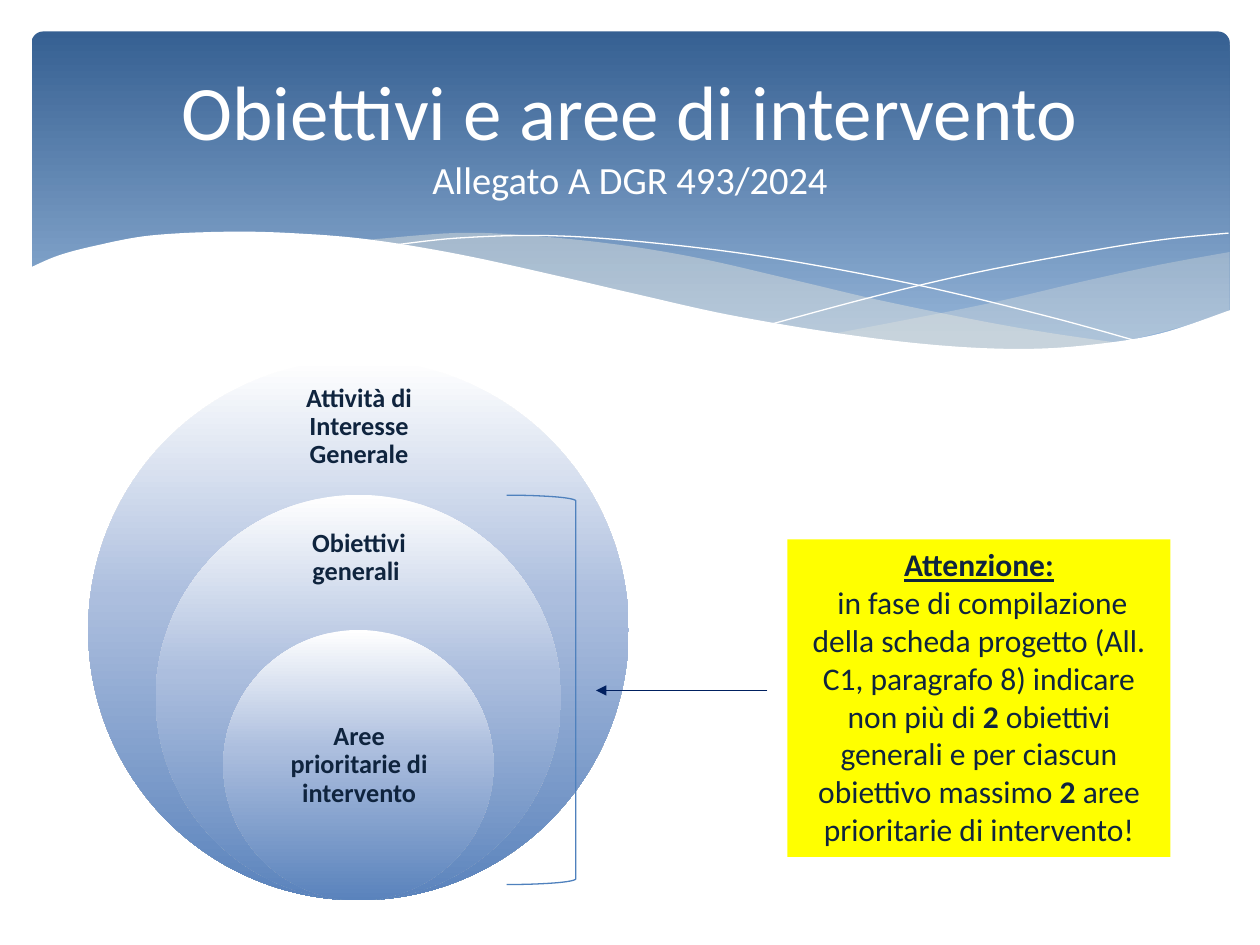
from copy import deepcopy

from lxml import etree
from pptx import Presentation
from pptx import util as u
from pptx.dml.color import RGBColor
from pptx.enum import shapes, text
from pptx.oxml.ns import qn


def rgb(value):
    return RGBColor.from_string(value)


def smooth(*knots):
    """Return EMU points along a Catmull-Rom curve through knots given in grid cells."""
    padded = (knots[0], *knots, knots[-1])
    points = []
    for a, b, c, d in zip(padded, padded[1:], padded[2:], padded[3:]):
        for step in range(8):
            t = step / 8
            x, y = (
                b[i] + t * (c[i] - a[i]) / 2
                + t**2 * (2 * a[i] - 5 * b[i] + 4 * c[i] - d[i]) / 2
                + t**3 * (3 * b[i] - a[i] - 3 * c[i] + d[i]) / 2
                for i in (0, 1)
            )
            points.append((x * column, y * row))
    return points + [(knots[-1][0] * column, knots[-1][1] * row)]


presentation = Presentation()
presentation.slide_width, presentation.slide_height = u.Inches(10), u.Inches(7.5)
slide = presentation.slides.add_slide(presentation.slide_layouts[6])
column = presentation.slide_width / 100
row = presentation.slide_height / 75

KIND = shapes.MSO_SHAPE
NAVY = "0F243E"
painted = []  # shape, gradient stops, line colour, alpha

# Header band and its waves
band = slide.shapes.add_shape(
    KIND.ROUNDED_RECTANGLE, *(round(n * column) for n in (2.5, 2.5, 95.1, 27)))
band.adjustments[0] = 0.034
painted.append((band, [(0, "366092"), (0.9, "93B3D7")], None, None))

right_wave = (
    smooth((97.6, 20), (92.1, 21), (86.1, 22.3), (77.9, 24.2), (66.1, 26.5))
    + smooth((66.1, 26.5), (73.2, 27.4), (80.3, 27.8), (87.2, 27.4), (92.8, 26.2), (97.6, 24.7))
)
middle_wave = (
    smooth((89.3, 27.3), (80.7, 26), (70.6, 24), (62.9, 22.2), (55.5, 20.5),
           (48.9, 19.4), (42, 18.7), (36.1, 18.5), (28.6, 19.1))
    + smooth((28.6, 19.1), (36.2, 20.3), (44.9, 22.2), (56.6, 24.8), (66.5, 26.6),
             (76.1, 27.7), (82.8, 27.8), (89.3, 27.3))
)
falling_line = smooth((30.9, 19.5), (36.3, 18.9), (43.3, 18.7), (51, 19.2),
                      (60.8, 20.4), (72.7, 22.6), (83.1, 25.1), (90.7, 27.2))
rising_line = smooth((61.3, 25.7), (69.5, 23.5), (77.6, 21.6), (86.6, 19.9),
                     (92.4, 19), (97.5, 18.5))
white_base = smooth(
    (97.7, 24.6), (92, 26.5), (86.3, 27.4), (80.9, 27.7), (74.4, 27.4), (66.8, 26.5),
    (57.9, 25), (50.3, 23.3), (44.7, 22), (36.5, 20.2), (29.2, 19), (23, 18.5),
    (17.7, 18.4), (11.9, 18.7), (7.6, 19.5), (4.6, 20.3), (2.3, 21.3),
) + [(2.3 * column, 32.9 * row), (97.7 * column, 32.9 * row)]

waves = [
    (right_wave, "EEECE1", None, 29),
    (middle_wave, "EEECE1", None, 40),
    (falling_line, None, "FFFFFF", None),
    (rising_line, None, "FFFFFF", None),
    (white_base, "FFFFFF", None, None),
]
for points, fill, line, alpha in waves:
    builder = slide.shapes.build_freeform(*points[0])
    builder.add_line_segments(points[1:], close=fill is not None)
    painted.append((builder.convert_to_shape(), [(0, fill)] if fill else [], line, alpha))

# Nested circles: common centre line and bottom, shrinking by a quarter
DIAMETER, CENTRE, BOTTOM = 42.9, 28.45, 71.45
labels = [
    ("Attività di Interesse Generale", (21, 30.7, 15, 6.4)),
    ("Obiettivi generali ", (21, 41.3, 15, 6)),
    ("Aree prioritarie di intervento", (20.9, 55.4, 15.2, 10.7)),
]
texts = []  # shape, inset, line spacing, anchor, paragraphs of (text, size, format)
for level, (label, box) in enumerate(labels):
    size = DIAMETER * (1 - level / 4)
    circle = slide.shapes.add_shape(KIND.OVAL, *(
        round(n * column) for n in (CENTRE - size / 2, BOTTOM - size, size, size)))
    painted.append((circle, [(0, "FFFFFF"), (0.44, "ACBEDE"), (1, "5A83BC")], None, None))
    label_box = slide.shapes.add_textbox(*(round(n * column) for n in box))
    texts.append((label_box, (0.12, 0.12), 0.9, text.MSO_ANCHOR.MIDDLE, NAVY,
                  [[(label, 15, {"bold": True})]]))

title = slide.shapes.add_textbox(*(round(n * column) for n in (5, 3.7, 90, 13.7)))
texts.append((title, (0.1, 0.05), 1, text.MSO_ANCHOR.MIDDLE, "FFFFFF", [
    [("Obiettivi e aree di intervento", 44, {}), None, ("Allegato A DGR 493/2024", 22, {})],
]))

# Arrow, bracket and warning
arrow = slide.shapes.add_connector(
    shapes.MSO_CONNECTOR.STRAIGHT, *(round(n * column) for n in (60.9, 54.8, 47.3, 54.8)))
arrow.line.color.rgb = rgb("002060")
arrow.line.width = u.Pt(0.75)
etree.SubElement(arrow.line._get_or_add_ln(), qn("a:tailEnd"), type="triangle")
etree.SubElement(arrow.element.spPr, qn("a:effectLst"))

bracket = slide.shapes.add_shape(
    KIND.RIGHT_BRACKET, *(round(n * column) for n in (40.2, 39.3, 5.5, 30.9)))
bracket.adjustments[0] = 0.083
painted.append((bracket, [], "4F81BD", None))

warning = slide.shapes.add_shape(
    KIND.RECTANGLE, *(round(n * column) for n in (62.5, 42.8, 30.4, 25.2)))
painted.append((warning, [(0, "FFFF00")], None, None))
texts.append((warning, (0.1, 0.05), 1, text.MSO_ANCHOR.TOP, NAVY, [
    [("Attenzione:", 18, {"bold": True, "underline": True})],
    [(" in fase di compilazione della scheda progetto (All. C1, paragrafo 8) "
      "indicare non più di ", 18, {}),
     ("2", 18, {"bold": True}),
     (" obiettivi generali e per ciascun obiettivo massimo ", 18, {}),
     ("2", 18, {"bold": True}),
     (" aree prioritarie di intervento!", 18, {})],
]))

for shape, stops, line, alpha in painted:
    shape.shadow.inherit = False
    if not stops:
        shape.fill.background()
    elif len(stops) == 1:
        shape.fill.solid()
        shape.fill.fore_color.rgb = rgb(stops[0][1])
    else:
        shape.fill.gradient()
        shape.fill.gradient_angle = 270
        stop_list = shape.element.spPr.find(".//" + qn("a:gsLst"))
        for _ in stops[2:]:
            stop_list.append(deepcopy(stop_list[-1]))
        for stop, (position, value) in zip(shape.fill.gradient_stops, stops):
            stop.position = position
            stop.color.rgb = rgb(value)
    if alpha:
        colour = shape.element.spPr.find(qn("a:solidFill"))[0]
        etree.SubElement(colour, qn("a:alpha"), val=str(alpha * 1000))
    if line:
        shape.line.color.rgb = rgb(line)
        shape.line.width = u.Pt(0.75)
    else:
        shape.line.fill.background()

for shape, (side, edge), spacing, anchor, colour, paragraphs in texts:
    frame = shape.text_frame
    frame_format = {
        "word_wrap": True, "vertical_anchor": anchor,
        "margin_left": u.Inches(side), "margin_right": u.Inches(side),
        "margin_top": u.Inches(edge), "margin_bottom": u.Inches(edge),
    }
    for name, value in frame_format.items():
        setattr(frame, name, value)
    for index, runs in enumerate(paragraphs):
        paragraph = frame.add_paragraph() if index else frame.paragraphs[0]
        paragraph.alignment = text.PP_ALIGN.CENTER
        paragraph.line_spacing = spacing
        for part in runs:
            if part is None:
                paragraph.add_line_break()
                continue
            words, size, style = part
            run = paragraph.add_run()
            run.text = words
            run.font.color.rgb = rgb(colour)
            for name, value in {"name": "Calibri", "size": u.Pt(size), **style}.items():
                setattr(run.font, name, value)

presentation.save("out.pptx")
